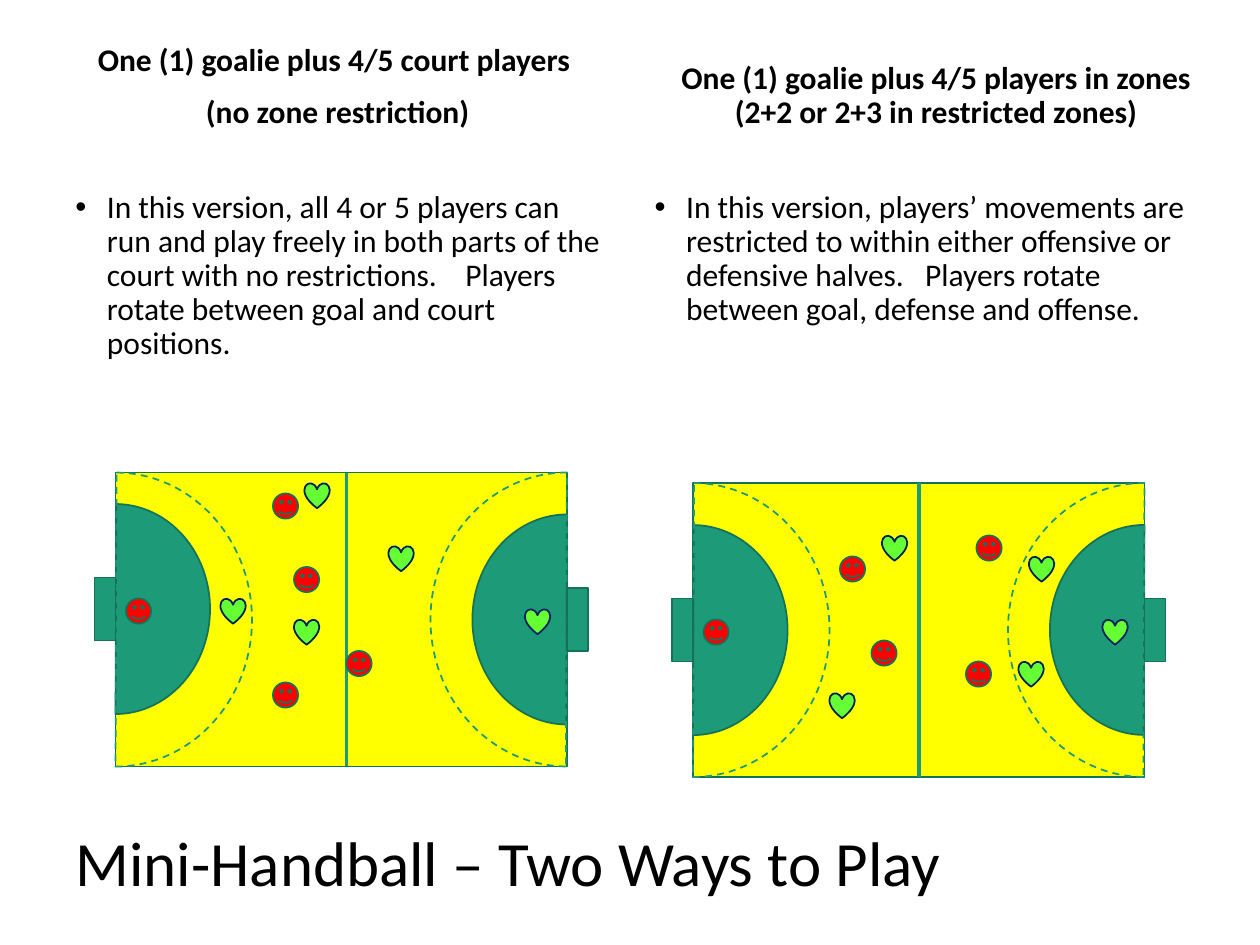
from lxml import etree
from pptx import Presentation
from pptx.dml.color import RGBColor
from pptx.enum.dml import MSO_LINE
from pptx.enum.shapes import MSO_CONNECTOR, MSO_SHAPE
from pptx.enum.text import MSO_ANCHOR, PP_ALIGN
from pptx.oxml.ns import qn
from pptx.util import Pt

RECT, CHORD = MSO_SHAPE.RECTANGLE, MSO_SHAPE.CHORD
FACE, HEART = MSO_SHAPE.SMILEY_FACE, MSO_SHAPE.HEART
STRAIGHT, DASH = MSO_CONNECTOR.STRAIGHT, MSO_LINE.DASH
LEFT, CENTER = PP_ALIGN.LEFT, PP_ALIGN.CENTER
TOP, MIDDLE, BOTTOM = MSO_ANCHOR.TOP, MSO_ANCHOR.MIDDLE, MSO_ANCHOR.BOTTOM

BLACK = RGBColor(0x00, 0x00, 0x00)
YELLOW = RGBColor(0xFF, 0xFF, 0x00)
GREEN = RGBColor(0x1D, 0x9A, 0x78)
DARK_GREEN = RGBColor(0x15, 0x72, 0x59)
RED = RGBColor(0xFF, 0x00, 0x00)
LIME = RGBColor(0x66, 0xFF, 0x33)
NAVY = RGBColor(0x00, 0x20, 0x60)

FONT = "Calibri"
COURT_W, COURT_H = 258, 168
AREA_W, AREA_H = 108, 120
ARC_W = 156
GOAL_W, GOAL_H = 12, 36
PLAYER = 14.4


def format_paragraph(p, size, bold=False, align=LEFT):
    p.alignment = align
    p.line_spacing = 0.9
    for r in p.runs:
        r.font.name, r.font.size, r.font.bold = FONT, Pt(size), bold
        r.font.color.rgb = BLACK


def add_title(s, text):
    title = s.shapes.title
    title.left, title.top, title.width, title.height = Pt(36), Pt(462), Pt(648), Pt(66)
    tf = title.text_frame
    tf.text = text
    tf.vertical_anchor = MIDDLE
    format_paragraph(tf.paragraphs[0], 36)


def add_text_box(s, x, y, w, h, anchor):
    tf = s.shapes.add_textbox(Pt(x), Pt(y), Pt(w), Pt(h)).text_frame
    tf.word_wrap = True
    tf.vertical_anchor = anchor
    return tf


def add_heading(s, x, lines):
    tf = add_text_box(s, x, 12, 338, 66, BOTTOM)
    tf.text = "\n".join(lines)
    for i, p in enumerate(tf.paragraphs):
        format_paragraph(p, 18, bold=True, align=CENTER)
        p.space_before = Pt(10 if i else 0)


def add_bullet(s, x, text):
    tf = add_text_box(s, x, 76, 317, 386, TOP)
    tf.margin_top = Pt(33.4)
    tf.text = text
    p = tf.paragraphs[0]
    format_paragraph(p, 18)
    pPr = p._p.get_or_add_pPr()
    pPr.set("marL", str(Pt(18)))
    pPr.set("indent", str(-Pt(18)))
    etree.SubElement(pPr, qn("a:buFont")).set("typeface", "Arial")
    etree.SubElement(pPr, qn("a:buChar")).set("char", "•")


def add_figure(s, kind, x, y, w, h, fill, line=DARK_GREEN):
    sp = s.shapes.add_shape(kind, Pt(x), Pt(y), Pt(w), Pt(h))
    sp.shadow.inherit = False
    if fill is None:
        sp.fill.background()
    else:
        sp.fill.solid()
        sp.fill.fore_color.rgb = fill
    sp.line.color.rgb = line
    sp.line.width = Pt(1)
    return sp


def add_half_circle(s, goal_x, y, w, h, faces_right, fill, line=DARK_GREEN):
    """Half ellipse whose straight side lies on the goal line."""
    sp = add_figure(s, CHORD, goal_x - w / 2, y, w, h, fill, line)
    sp.adjustments[0], sp.adjustments[1] = 54.26, 162
    sp.rotation = 180 if faces_right else 0
    return sp


def add_halfway_line(s, court, x):
    line = s.shapes.add_connector(STRAIGHT, Pt(x), court.top, Pt(x), court.top + court.height)
    line.line.color.rgb = GREEN
    line.line.width = Pt(2.25)
    etree.SubElement(line._element.spPr, qn("a:effectLst"))
    return line


def add_goal_end(s, goal_x, court_y, area_y, is_left):
    add_half_circle(s, goal_x, area_y, AREA_W, AREA_H, is_left, GREEN)
    arc = add_half_circle(s, goal_x, court_y, ARC_W, COURT_H, is_left, None, GREEN)
    arc.line.dash_style = DASH
    goal_y = area_y + (AREA_H - GOAL_H) / 2
    add_figure(s, RECT, goal_x - GOAL_W if is_left else goal_x, goal_y, GOAL_W, GOAL_H, GREEN)


def add_court(s, x, y, halfway_x, area_tops):
    court = add_figure(s, RECT, x, y, COURT_W, COURT_H, YELLOW)
    line = add_halfway_line(s, court, halfway_x)
    if halfway_x == x + COURT_W / 2:
        line.begin_connect(court, 0)
        line.end_connect(court, 2)
    add_goal_end(s, x, y, area_tops[0], True)
    add_goal_end(s, x + COURT_W, y, area_tops[1], False)


def add_players(s, kind, places, fill, line):
    for x, y in places:
        add_figure(s, kind, x, y, PLAYER, PLAYER, fill, line)


def main():
    prs = Presentation()
    prs.slide_width, prs.slide_height = Pt(720), Pt(540)
    s = prs.slides.add_slide(prs.slide_layouts[5])

    # Title and the two columns of text
    add_title(s, "Mini-Handball – Two Ways to Play")
    add_heading(s, 24, ["One (1) goalie plus 4/5 court players ", "(no zone restriction)"])
    add_bullet(s, 36, "In this version, all 4 or 5 players can run and play freely in both "
                      "parts of the court with no restrictions.    Players rotate between "
                      "goal and court positions.")
    add_heading(s, 366, ["One (1) goalie plus 4/5 players in zones "
                         "(2+2 or 2+3 in restricted zones)"])
    add_bullet(s, 367, "In this version, players’ movements are restricted to within either "
                       "offensive or defensive halves.   Players rotate between goal, "
                       "defense and offense.")

    # Courts
    add_court(s, 66, 270, 198, (288, 294))
    add_court(s, 396, 276, 525, (300, 300))

    # Red team, left court then right court
    add_players(s, FACE, [(168, 324), (72, 342), (156, 390), (156, 282), (198, 372),
                          (402, 354), (480, 318), (498, 366), (558, 306), (552, 378)],
                RED, DARK_GREEN)

    # Green team, left court then right court
    add_players(s, HEART, [(300, 348), (222, 312), (174, 276), (168, 354), (126, 342),
                           (630, 354), (588, 318), (582, 378), (504, 306), (474, 396)],
                LIME, NAVY)

    prs.save("out.pptx")


if __name__ == "__main__":
    main()
